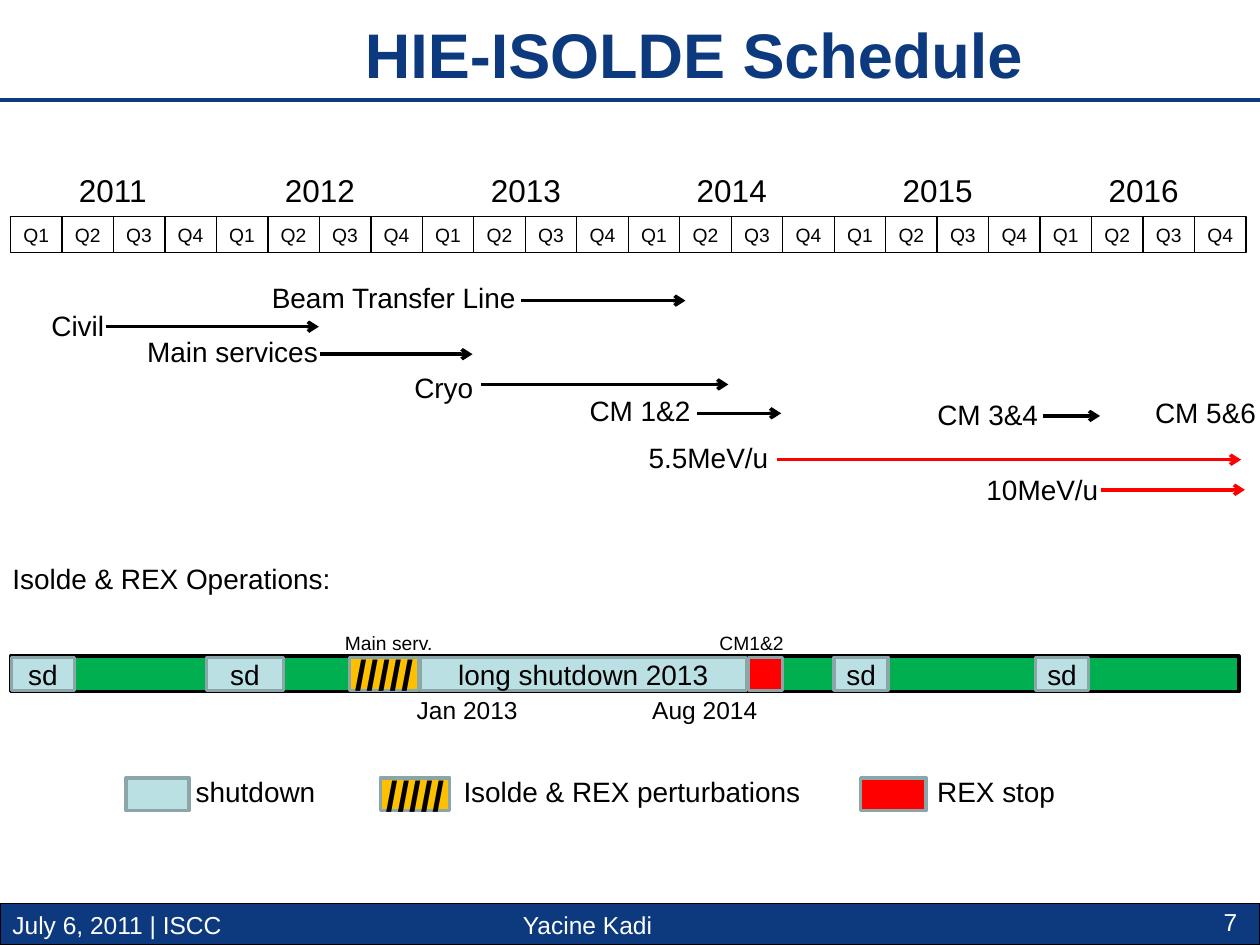
from lxml import etree
from pptx import Presentation
from pptx.dml.color import RGBColor
from pptx.enum.shapes import MSO_CONNECTOR, MSO_SHAPE
from pptx.enum.text import MSO_ANCHOR, PP_ALIGN
from pptx.oxml.ns import qn
from pptx.util import Pt

RECTANGLE = MSO_SHAPE.RECTANGLE
STRAIGHT = MSO_CONNECTOR.STRAIGHT
LEFT, CENTER, RIGHT = PP_ALIGN.LEFT, PP_ALIGN.CENTER, PP_ALIGN.RIGHT
TOP, MIDDLE = MSO_ANCHOR.TOP, MSO_ANCHOR.MIDDLE

NAVY, BLACK, WHITE, RED = "0D3A7E", "000000", "FFFFFF", "FF0000"
GREEN, PALE_BLUE, GOLD, GREY = "00B050", "BBE0E3", "FFC000", "8AA6A8"
HATCH = "/////"


def rgb(value):
    return RGBColor.from_string(value)


class SlideBuilder:
    font_name = "Arial"

    def __init__(self, slide):
        self.slide = slide

    def set_text(self, frame, text, size, color=BLACK, bold=False, align=LEFT):
        frame.text = text
        paragraph = frame.paragraphs[0]
        paragraph.alignment = align
        font = paragraph.font
        font.name, font.size, font.bold = self.font_name, Pt(size), bold
        font.color.rgb = rgb(color)

    def title(self, text, left, top, width, height):
        title = self.slide.shapes.title
        title.left, title.top = Pt(left), Pt(top)
        title.width, title.height = Pt(width), Pt(height)
        title.text_frame.vertical_anchor = TOP
        self.set_text(title.text_frame, text, 36, NAVY, True, CENTER)

    def label(self, text, left, top, width, size=16, color=BLACK, align=LEFT):
        box = self.slide.shapes.add_textbox(
            Pt(left), Pt(top), Pt(width), Pt(1.2 * size + 7.2))
        box.text_frame.word_wrap = True
        self.set_text(box.text_frame, text, size, color, align=align)

    def box(self, left, top, width, height, fill=None, line=GREY,
            line_width=2, text="", size=16, bold=False):
        shape = self.slide.shapes.add_shape(
            RECTANGLE, Pt(left), Pt(top), Pt(width), Pt(height))
        shape.shadow.inherit = False
        if fill:
            shape.fill.solid()
            shape.fill.fore_color.rgb = rgb(fill)
        else:
            shape.fill.background()
        shape.line.color.rgb = rgb(line)
        shape.line.width = Pt(line_width)
        if text:
            frame = shape.text_frame
            frame.word_wrap = False
            frame.vertical_anchor = MIDDLE
            frame.margin_left = frame.margin_right = 0
            frame.margin_top = frame.margin_bottom = 0
            self.set_text(frame, text, size, bold=bold, align=CENTER)

    def line(self, start, end, y, color=BLACK, width=2, arrow=True):
        connector = self.slide.shapes.add_connector(
            STRAIGHT, Pt(start), Pt(y), Pt(end), Pt(y))
        connector.line.color.rgb = rgb(color)
        connector.line.width = Pt(width)
        properties = connector._element.spPr
        if arrow:
            outline = properties.find(qn("a:ln"))
            etree.SubElement(outline, qn("a:tailEnd"), type="arrow")
        etree.SubElement(properties, qn("a:effectLst"))


def main():
    presentation = Presentation()
    presentation.slide_width, presentation.slide_height = Pt(720), Pt(540)
    slide = presentation.slides.add_slide(presentation.slide_layouts[5])
    builder = SlideBuilder(slide)

    # Header and footer
    builder.title("HIE-ISOLDE Schedule", 147.6, 5, 498, 50.4)
    builder.line(0, 720, 57.4, NAVY, 2.25, arrow=False)
    builder.box(0, 516.2, 720, 23.8, NAVY, BLACK, 0.75)
    builder.label("July 6, 2011 | ISCC", 0, 516.2, 200, 14, WHITE)
    builder.label("Yacine Kadi", 291.7, 516.2, 120, 14, WHITE)
    builder.label("7", 546, 515, 168, 14, WHITE, RIGHT)

    # Years and quarters
    quarter_width = 29.42
    for year in range(6):
        year_offset = year * 4 * quarter_width
        builder.label(str(2011 + year), 38 + year_offset, 94.3, 60, 18)
        for quarter in range(4):
            builder.box(6 + year_offset + quarter * quarter_width, 123.9,
                        quarter_width, 20.6, line=BLACK, line_width=0.75,
                        text=f"Q{quarter + 1}", size=11)

    # Tasks: name, left, top, width
    tasks = [
        ("Beam Transfer Line", 148.3, 157, 194),
        ("Civil", 22.3, 172.6, 84),
        ("Main services", 77, 187.6, 127),
        ("Cryo", 229.7, 208, 56),
        ("CM 1&2", 329.8, 221.4, 87),
        ("CM 3&4", 528.5, 223.4, 74),
        ("CM 5&6", 653, 222.5, 74),
        ("5.5MeV/u", 363.6, 248.4, 87),
        ("10MeV/u", 556.6, 266.6, 82),
    ]
    for task in tasks:
        builder.label(*task)

    # Task durations: start, end, height on the slide, colour
    durations = [
        (298, 391.7, 171.8, BLACK),
        (60.5, 182.2, 186.7, BLACK),
        (182.9, 270, 202.4, BLACK),
        (275, 416.2, 219.7, BLACK),
        (398.2, 446.4, 236.2, BLACK),
        (596.2, 628.6, 237.7, BLACK),
        (444.2, 709.2, 262.7, RED),
        (629.3, 711.4, 279.9, RED),
    ]
    for duration in durations:
        builder.line(*duration)

    # Operations bar: left, width, fill, text, size, bold
    builder.label("Isolde & REX Operations:", 0, 317.5, 212)
    builder.box(6, 375, 702, 20.3, GREEN, BLACK)
    periods = [
        (6.5, 36, PALE_BLUE, "sd", 16, False),
        (118, 44, PALE_BLUE, "sd", 16, False),
        (199.6, 39.6, GOLD, HATCH, 24, True),
        (240, 186.5, PALE_BLUE, "long shutdown 2013", 16, False),
        (427.7, 19.4, RED, "", 16, False),
        (476.6, 31, PALE_BLUE, "sd", 16, False),
        (591.8, 30.2, PALE_BLUE, "sd", 16, False),
    ]
    for left, width, fill, text, size, bold in periods:
        builder.box(left, 375.8, width, 18.7, fill,
                    text=text, size=size, bold=bold)
    builder.label("Main serv.", 190, 357.1, 71, 11)
    builder.label("CM1&2", 404, 357.1, 72, 11)
    builder.label("Jan 2013", 231, 393.8, 90, 14)
    builder.label("Aug 2014", 365.6, 393.8, 90, 14)

    # Legend: box left, box width, fill, hatch, name, name left
    legend = [
        (72, 36, PALE_BLUE, "", "shutdown", 104.8),
        (217.4, 39.6, GOLD, HATCH, "Isolde & REX perturbations", 257.8),
        (491.8, 37.4, RED, "", "REX stop", 528.5),
    ]
    for left, width, fill, hatch, name, name_left in legend:
        builder.box(left, 444.5, width, 18.7, fill,
                    text=hatch, size=24, bold=True)
        builder.label(name, name_left, 439.2, 210)

    presentation.save("out.pptx")


if __name__ == "__main__":
    main()
